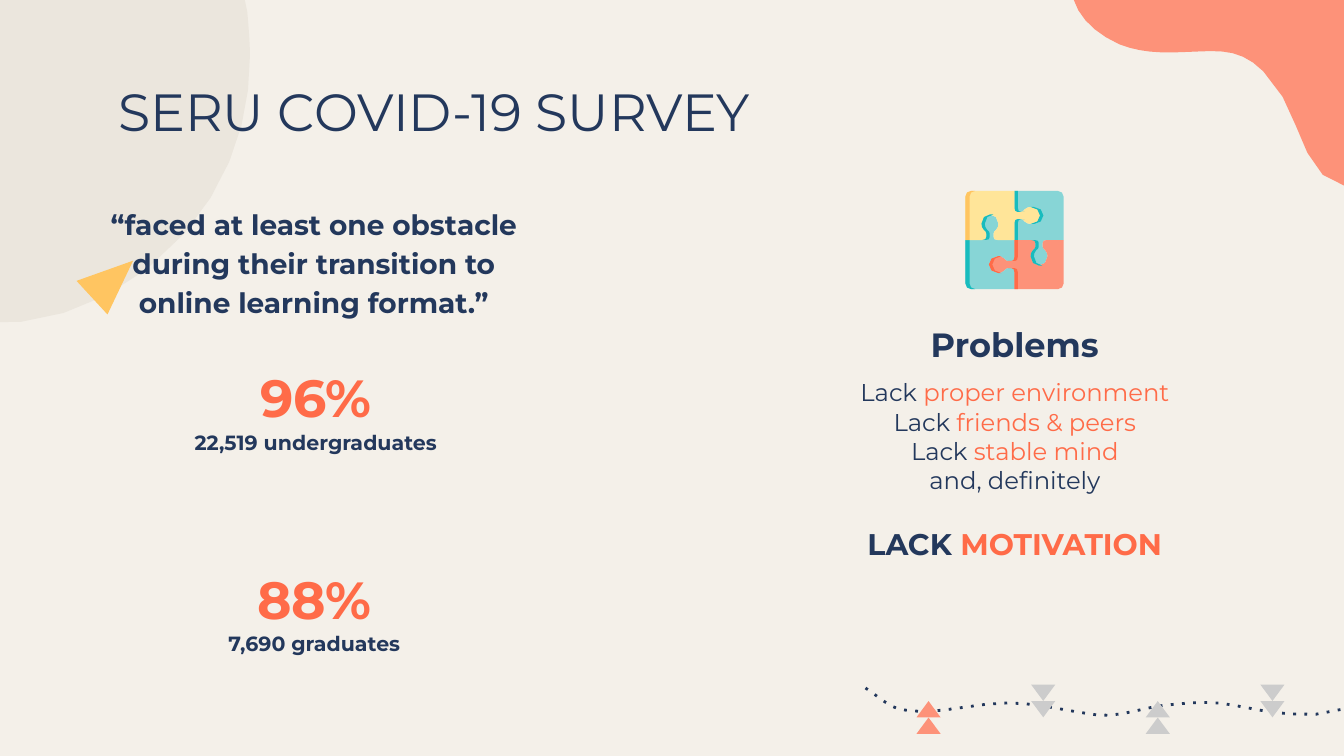
"""Build the survey slide with its statistics, problem list and ornaments."""
from lxml import etree
from pptx import Presentation
from pptx.dml.color import RGBColor
from pptx.enum.shapes import MSO_SHAPE
from pptx.enum.text import MSO_ANCHOR, PP_ALIGN
from pptx.oxml.ns import qn
from pptx.util import Pt

TRIANGLE = MSO_SHAPE.ISOSCELES_TRIANGLE
TOP = MSO_ANCHOR.TOP
LEFT, CENTER = PP_ALIGN.LEFT, PP_ALIGN.CENTER

CREAM = RGBColor(0xF4, 0xF0, 0xE9)
SAND = RGBColor(0xEB, 0xE6, 0xDD)
NAVY = RGBColor(0x23, 0x38, 0x5C)
ORANGE = RGBColor(0xFF, 0x6B, 0x48)
CORAL = RGBColor(0xFD, 0x92, 0x79)
AMBER = RGBColor(0xFF, 0xC5, 0x61)
YELLOW = RGBColor(0xFF, 0xE5, 0x99)
AQUA = RGBColor(0x87, 0xD5, 0xD6)
TEAL = RGBColor(0x18, 0xBC, 0xBE)
GREY = RGBColor(0xCC, 0xCC, 0xCC)

LARGE_STEPS, SMALL_STEPS = 5, 2

SAND_BLOB = [
    (133.9, 30.2),
    (133.9, 22.3, 133.2, 14.4, 132.5, 6.5),
    (131.8, 2.9, 131, -0.7, 130.3, -4.3),
    (-10.1, -4.3),
    (-10.1, 172.8),
    (24.5, 175.7, 67, 161.3, 98.6, 125.3),
    (126, 93.6, 133.9, 59.8, 133.9, 30.2),
]
CORAL_BLOB = [
    (721.4, 100.1),
    (694.8, 95, 698.4, 58.3, 676.8, 38.2),
    (667.4, 28.8, 658.8, 27.4, 649.4, 27.4),
    (642.2, 27.4, 634.3, 28.1, 625.7, 28.1),
    (617.8, 28.1, 609.1, 27.4, 599.8, 23.8),
    (586.8, 18, 578.2, 9.4, 575.3, 0),
    (721.4, 0),
]
DART = [(71.3, 139.7), (41, 150.5), (57.6, 168.5)]
WAVE = [
    (463.7, 368.6),
    (469.4, 372.2, 475.2, 378, 482.4, 380.2),
    (501.1, 383.8, 520.6, 376.6, 540, 376.6),
    (555.8, 376.6, 571, 380.9, 587.5, 383),
    (599, 384.5, 611.3, 379.4, 622.8, 378),
    (635.8, 376.6, 649.4, 375.1, 661.7, 378),
    (684, 382.3, 712.8, 388.1, 730.1, 373.7),
]

PUZZLE_CENTER = (543.5, 128.6)
PIECE = 26.3
HALF_SEAM = [
    (0, 0),
    (0, -9.1),
    (0, -10.6, 0.6, -11.2, 1.6, -11.2),
    (3.6, -11.2),
    (4.3, -11.2, 4.9, -10.6, 5.4, -9.9),
    (6.4, -9, 7.5, -8.6, 8.7, -8.6),
    (11.6, -8.6, 13.7, -10.7, 13.7, -PIECE / 2),
]
CORNER = [(PIECE - 3, -PIECE), (PIECE - 1.3, -PIECE, PIECE, 1.3 - PIECE, PIECE, 3 - PIECE)]
INNER_NECK, CAP, OUTER_NECK = slice(0, 5), slice(8, 13), slice(16, 21)
OUTER_SIDE, INNER_SIDE = slice(10, 20), slice(1, 11)


def flatten(path, steps):
    """Turn lines and cubic curves into a list of points."""
    points = [path[0]]
    for segment in path[1:]:
        if len(segment) == 2:
            points.append(segment)
            continue
        controls = [points[-1], segment[:2], segment[2:4], segment[4:]]
        for index in range(1, steps + 1):
            t = index / steps
            weights = ((1 - t) ** 3, 3 * t * (1 - t) ** 2, 3 * t * t * (1 - t), t ** 3)
            points.append(tuple(
                sum(weight * control[axis] for weight, control in zip(weights, controls))
                for axis in (0, 1)))
    return points


def turn(points, quarters):
    """Rotate points clockwise around the origin by quarter turns."""
    for _ in range(quarters):
        points = [(-y, x) for x, y in points]
    return points


def band(edge, width):
    """Outline the strip between an edge and the same edge moved right."""
    return edge + [(x + width, y) for x, y in reversed(edge)]


class SlideBuilder:
    """Hold the type style and the current slide."""

    font_name = "Montserrat"
    inset = Pt(7.2)

    def __init__(self, slide):
        self.slide = slide
        slide.background.fill.solid()
        slide.background.fill.fore_color.rgb = CREAM

    def paint(self, shape, color):
        """Give a shape a plain fill."""
        shape.shadow.inherit = False
        shape.fill.solid()
        shape.fill.fore_color.rgb = color
        shape.line.fill.background()

    def trace(self, points, closed):
        """Draw an outline through points."""
        vertices = [(Pt(x), Pt(y)) for x, y in points]
        builder = self.slide.shapes.build_freeform(*vertices[0], scale=1.0)
        builder.add_line_segments(vertices[1:], close=closed)
        return builder.convert_to_shape()

    def outline(self, points, color, origin=(0, 0)):
        """Add a filled outline."""
        moved = [(x + origin[0], y + origin[1]) for x, y in points]
        self.paint(self.trace(moved, True), color)

    def dotted_curve(self, points, color):
        """Add an open dotted line."""
        shape = self.trace(points, False)
        shape.shadow.inherit = False
        shape.fill.background()
        shape.line.color.rgb = color
        shape.line.width = Pt(1.5)
        line = shape.element.spPr.find(qn("a:ln"))
        etree.SubElement(line, qn("a:prstDash")).set("val", "dot")

    def triangle(self, left, top, color, rotation):
        """Add a small marker triangle."""
        shape = self.slide.shapes.add_shape(TRIANGLE, Pt(left), Pt(top), Pt(12.9), Pt(8.7))
        shape.rotation = rotation
        self.paint(shape, color)

    def text(self, box, paragraphs, size, bold=False, align=CENTER, spacing=None):
        """Add a text box whose paragraphs are lists of (text, color) runs."""
        frame = self.slide.shapes.add_textbox(*map(Pt, box)).text_frame
        frame.word_wrap = True
        frame.vertical_anchor = TOP
        frame.margin_left = frame.margin_right = self.inset
        frame.margin_top = frame.margin_bottom = self.inset
        for index, runs in enumerate(paragraphs):
            paragraph = frame.add_paragraph() if index else frame.paragraphs[0]
            paragraph.alignment = align
            paragraph.line_spacing = spacing
            paragraph.font.name = self.font_name
            paragraph.font.size = Pt(size)
            paragraph.font.bold = bold
            for content, color in runs:
                run = paragraph.add_run()
                run.text = content
                run.font.color.rgb = color

    def puzzle(self):
        """Add four interlocking pieces with their shaded left edges."""
        half = flatten(HALF_SEAM, SMALL_STEPS)
        seam = half + [(x, -PIECE - y) for x, y in reversed(half[:-1])]
        top, right, bottom, left = seams = [turn(seam, quarters) for quarters in range(4)]
        corners = [turn(flatten(CORNER, SMALL_STEPS), quarters) for quarters in range(4)]
        for index, color in enumerate((AQUA, CORAL, AQUA, YELLOW)):
            piece = seams[index] + corners[index] + seams[(index + 1) % 4][::-1]
            self.outline(piece[:-1], color, PUZZLE_CENTER)
        middle_left = [(-PIECE, 0)]
        self.outline(band(corners[2] + middle_left, 2.2), TEAL, PUZZLE_CENTER)
        self.outline(band(middle_left + corners[3], 2.2), AMBER, PUZZLE_CENTER)
        shades = [(edge[part], color) for edge, color in ((top, TEAL), (bottom, ORANGE))
                  for part in (INNER_NECK, CAP, OUTER_NECK)]
        shades += [(left[OUTER_SIDE], TEAL), (right[INNER_SIDE], TEAL)]
        for edge, color in shades:
            self.outline(band(edge, 1.8), color, PUZZLE_CENTER)


def main():
    """Compose and save the slide."""
    presentation = Presentation()
    presentation.slide_width, presentation.slide_height = Pt(720), Pt(405)
    builder = SlideBuilder(presentation.slides.add_slide(presentation.slide_layouts[6]))

    for path, color in ((SAND_BLOB, SAND), (CORAL_BLOB, CORAL), (DART, AMBER)):
        builder.outline(flatten(path, LARGE_STEPS), color)

    builder.text((70.6, 223.9, 197.3, 35.3), [[("22,519 undergraduates", NAVY)]], 11, True)
    builder.text((127.4, 188.6, 83.5, 41.8), [[("96%", ORANGE)]], 28, True)
    builder.text((85.7, 331.2, 165.6, 35.3), [[("7,690 graduates", NAVY)]], 11, True)
    builder.text((126.7, 296.6, 83.5, 41.8), [[("88%", ORANGE)]], 28, True)
    quote = "“faced at least one obstacle during their transition to online learning format.”"
    builder.text((45.4, 101.5, 245.5, 74.9), [[(quote, NAVY)]], 15, True, spacing=1.15)
    builder.text((56.2, 35.3, 534.2, 45.4), [[("SERU COVID-19 SURVEY", NAVY)]], 28, align=LEFT)
    builder.text((429.1, 166.3, 229, 28.1), [[("Problems", NAVY)]], 18, True)
    problems = [[("Lack ", NAVY), (missing, ORANGE)]
                for missing in ("proper environment", "friends & peers", "stable mind")]
    problems.append([("and, definitely", NAVY)])
    builder.text((429.1, 195.1, 229, 92.2), problems, 13)

    builder.puzzle()
    builder.text((425.5, 274.3, 236.2, 28.1), [[("LACK", NAVY), (" MOTIVATION", ORANGE)]], 16, True)

    builder.dotted_curve(flatten(WAVE, LARGE_STEPS), NAVY)
    for index, color in enumerate((CORAL, GREY, GREY, GREY)):
        top, rotation = ((375.6, 0), (366.8, 180))[index % 2]
        for row in range(2):
            builder.triangle(491 + 61.4 * index, top + 8.8 * row, color, rotation)

    presentation.save("out.pptx")


if __name__ == "__main__":
    main()
